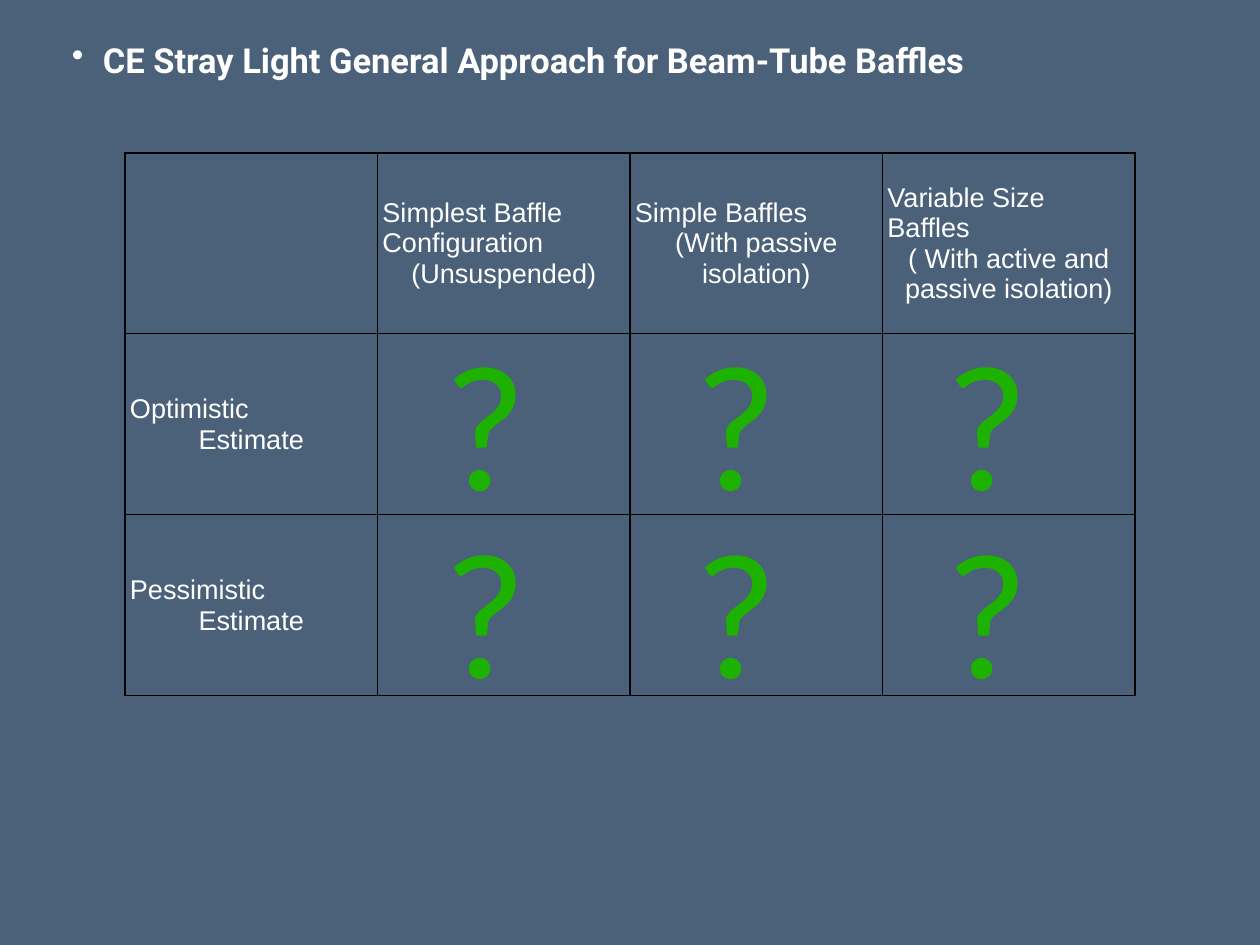
"""Build the slide on baffle estimates: a title, a table and question marks."""
from dataclasses import dataclass

from lxml import etree
from pptx import Presentation
from pptx import util as u
from pptx.dml.color import RGBColor
from pptx.enum import text
from pptx.oxml import ns, parse_xml

SCALE = 10321
INSET = 5
BACKGROUND = RGBColor(0x4B, 0x60, 0x79)
WHITE = RGBColor(0xFF, 0xFF, 0xFF)
GREEN = RGBColor(0x1D, 0xB1, 0x00)
BORDER = "000000"


@dataclass(frozen=True)
class Box:
    """A rectangle in px."""
    left: int
    top: int
    width: int
    height: int

    def emu(self) -> list[int]:
        """Return the rectangle in EMU."""
        return [px(n) for n in (self.left, self.top, self.width, self.height)]


@dataclass(frozen=True)
class Label:
    """A table heading: its place and its two parts."""
    row: int
    column: int
    name: str
    detail: str


TITLE = "CE Stray Light General Approach for Beam-Tube Baffles"
TITLE_BOX = Box(67, 34, 1124, 76)
TABLE_BOX = Box(125, 153, 1010, 543)
MARK_BOX = Box(439, 260, 142, 298)
MARK_STEP_X, MARK_STEP_Y = 251, 188
MARK_INSET_TOP = 25
LABELS = [
    Label(0, 1, "Simplest Baffle Configuration", "(Unsuspended)"),
    Label(0, 2, "Simple Baffles", "(With passive isolation)"),
    Label(0, 3, "Variable Size Baffles", "( With active and passive isolation)"),
    Label(1, 0, "Optimistic", "Estimate"),
    Label(2, 0, "Pessimistic", "Estimate"),
]


def px(length: int) -> int:
    """Turn px into EMU."""
    return length * SCALE


def set_margins(holder, top: int = INSET) -> None:
    """Set the insets of a cell or a text frame."""
    holder.margin_left = holder.margin_right = holder.margin_bottom = px(INSET)
    holder.margin_top = px(top)


def style(para, font: str, size: int, color: RGBColor, bold: bool = False) -> None:
    """Set the font of a paragraph."""
    para.font.name = font
    para.font.size = u.Pt(size)
    para.font.color.rgb = color
    para.font.bold = bold


def add_text(page, place: Box, words: str, top: int = INSET):
    """Add a one-paragraph text box and return its paragraph."""
    frame = page.shapes.add_textbox(*place.emu()).text_frame
    frame.word_wrap = True
    set_margins(frame, top)
    frame.vertical_anchor = text.MSO_ANCHOR.MIDDLE
    para = frame.paragraphs[0]
    para.text = words
    para.alignment = text.PP_ALIGN.LEFT
    return para


def add_title(page) -> None:
    """Add the bulleted title."""
    para = add_text(page, TITLE_BOX, TITLE)
    para._p.getparent().getparent().find(ns.qn("p:txBody")).find(
        ns.qn("a:bodyPr")).set("anchor", "t")
    style(para, "Roboto", 28, WHITE, bold=True)
    properties = para._p.get_or_add_pPr()
    properties.set("marL", str(px(31)))
    properties.set("indent", str(px(-31)))
    bullet = etree.Element(ns.qn("a:buChar"), char="•")
    properties.insert_element_before(bullet, "a:tabLst", "a:defRPr", "a:extLst")


def add_borders(cell) -> None:
    """Draw a thin line on each side of a cell."""
    properties = cell._tc.get_or_add_tcPr()
    for index, side in enumerate(("lnL", "lnR", "lnT", "lnB")):
        properties.insert(index, parse_xml(
            f'<a:{side} {ns.nsdecls("a")} w="12700"><a:solidFill>'
            f'<a:srgbClr val="{BORDER}"/></a:solidFill></a:{side}>'))


def add_estimates(page) -> None:
    """Add the table with its headings."""
    table = page.shapes.add_table(3, 4, *TABLE_BOX.emu()).table
    table.first_row = table.horz_banding = False
    for cell in table.iter_cells():
        cell.fill.background()
        cell.vertical_anchor = text.MSO_ANCHOR.MIDDLE
        set_margins(cell)
        add_borders(cell)
    for label in LABELS:
        frame = table.cell(label.row, label.column).text_frame
        name, detail = frame.paragraphs[0], frame.add_paragraph()
        name.text, detail.text = label.name, label.detail
        name.alignment = text.PP_ALIGN.LEFT
        detail.alignment = text.PP_ALIGN.CENTER
        for para in (name, detail):
            style(para, "Arial", 22, WHITE)


def add_marks(page) -> None:
    """Put a question mark over each open cell."""
    for row in range(2):
        for column in range(3):
            place = Box(MARK_BOX.left + column * MARK_STEP_X,
                        MARK_BOX.top + row * MARK_STEP_Y,
                        MARK_BOX.width, MARK_BOX.height)
            style(add_text(page, place, "?", MARK_INSET_TOP), "Calibri", 146, GREEN)


def main() -> None:
    """Build and save the deck."""
    deck = Presentation()
    deck.slide_width, deck.slide_height = px(1260), px(945)
    page = deck.slides.add_slide(deck.slide_layouts[6])
    page.background.fill.solid()
    page.background.fill.fore_color.rgb = BACKGROUND
    add_title(page)
    add_estimates(page)
    add_marks(page)
    deck.save("out.pptx")


if __name__ == "__main__":
    main()
